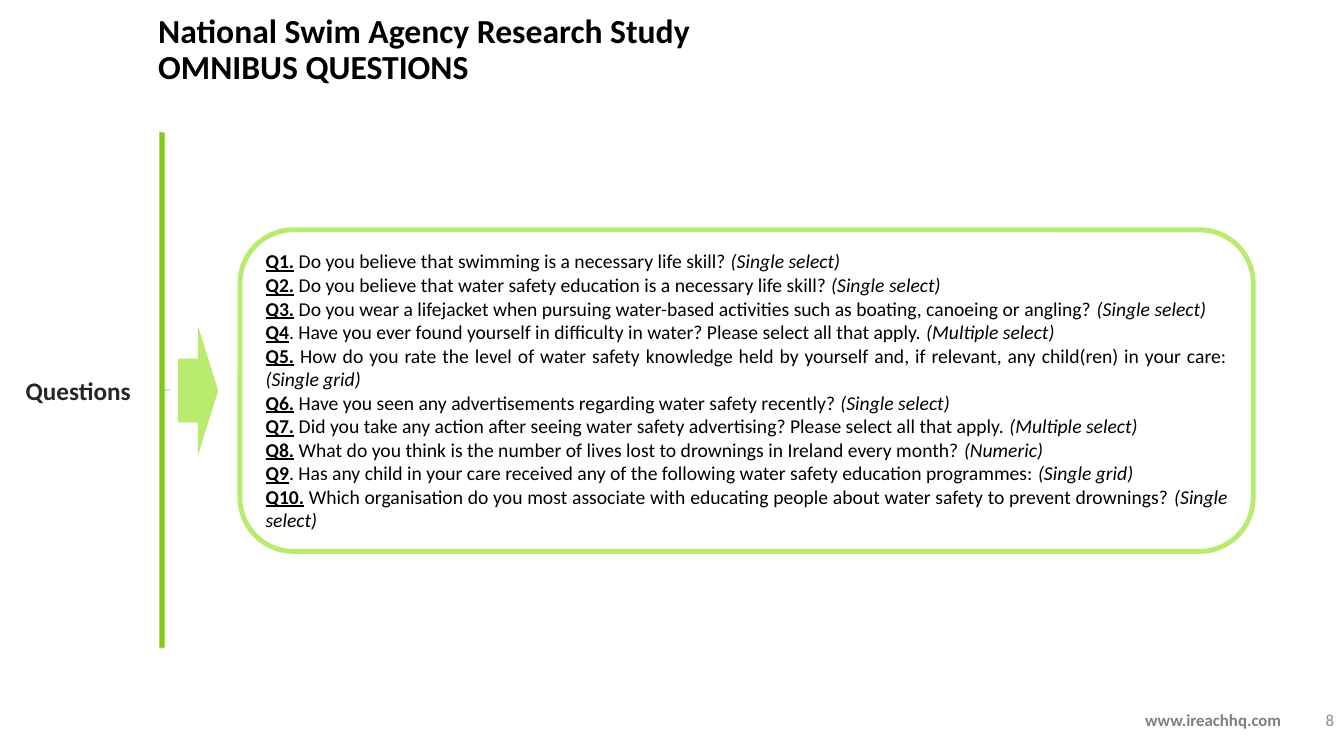
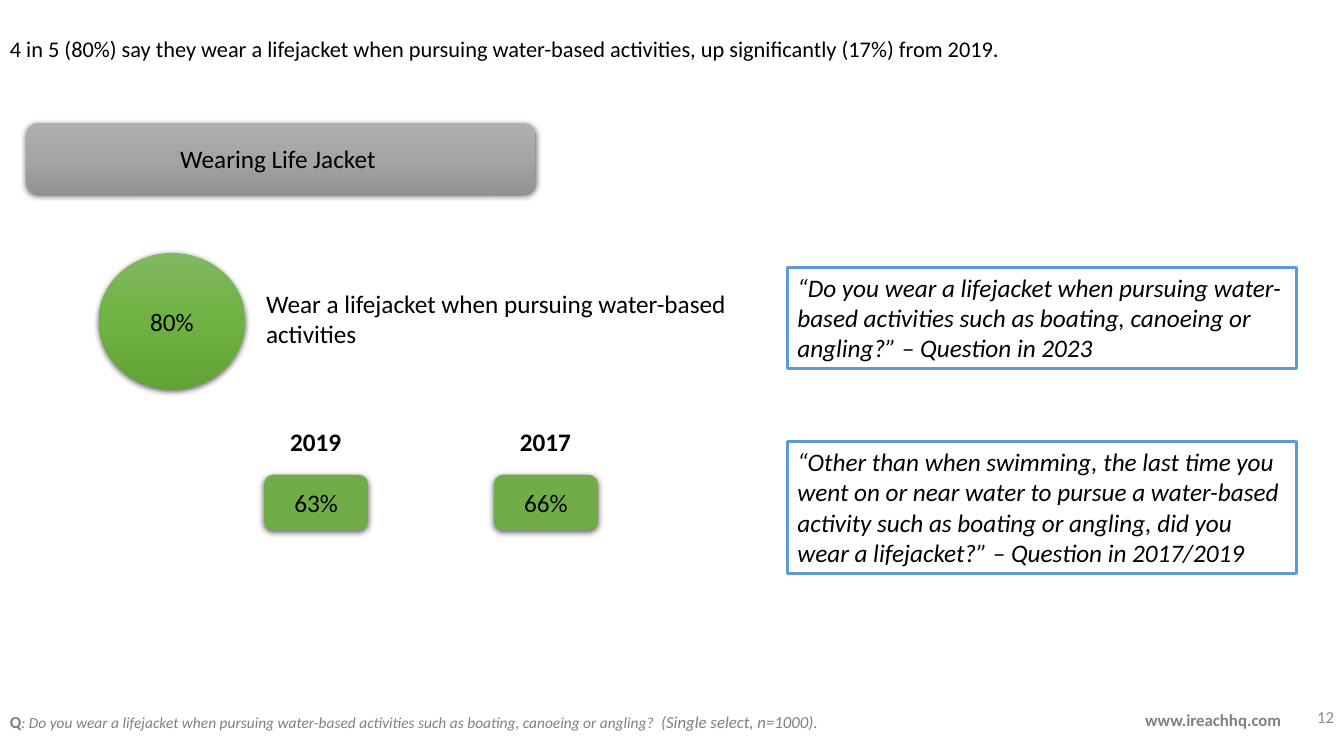
from dataclasses import dataclass
from typing import Optional

from pptx import Presentation
from pptx.dml.color import RGBColor
from pptx.enum.shapes import MSO_SHAPE
from pptx.enum.text import MSO_ANCHOR, PP_ALIGN
from pptx.oxml import parse_xml
from pptx.oxml.ns import nsdecls
from pptx.util import Inches, Pt

LEFT, CENTER, RIGHT, JUSTIFY = PP_ALIGN.LEFT, PP_ALIGN.CENTER, PP_ALIGN.RIGHT, PP_ALIGN.JUSTIFY
TOP, MIDDLE = MSO_ANCHOR.TOP, MSO_ANCHOR.MIDDLE
RECTANGLE, ROUNDED, OVAL = MSO_SHAPE.RECTANGLE, MSO_SHAPE.ROUNDED_RECTANGLE, MSO_SHAPE.OVAL
RIGHT_ARROW, RIGHT_BRACE = MSO_SHAPE.RIGHT_ARROW, MSO_SHAPE.RIGHT_BRACE

FONT = "Calibri"
BLACK, CHARCOAL, GREY, PAGE_GREY = "000000", "262626", "7F7F7F", "8C8C8C"
LIME, DARK_LIME, GREEN, BLUE = "B9EC6E", "83C91B", "70AD47", "5B9BD5"
GREEN_GRADIENT = ("81B861", "6FB242", "62A336")
GREY_GRADIENT = ("AFAFAF", "A5A5A5", "939393")


@dataclass(frozen=True)
class Box:
    left: float
    top: float
    width: float
    height: float

    def lengths(self):
        return [Inches(value) for value in (self.left, self.top, self.width, self.height)]


@dataclass(frozen=True)
class Span:
    text: str
    size: float = 18
    color: str = BLACK
    bold: bool = False
    italic: bool = False
    underline: bool = False


@dataclass(frozen=True)
class Question:
    label: str
    wording: str
    answer: str


@dataclass(frozen=True)
class YearResult:
    year: str
    share: str


@dataclass(frozen=True)
class Quote:
    text: str
    top: float
    height: float


QUESTIONS = [
    Question("Q1.", " Do you believe that swimming is a necessary life skill? ", "Single select"),
    Question("Q2.", " Do you believe that water safety education is a necessary life skill? ",
             "Single select"),
    Question("Q3.", " Do you wear a lifejacket when pursuing water-based activities such as "
             "boating, canoeing or angling? ", "Single select"),
    Question("Q4", ". Have you ever found yourself in difficulty in water? "
             "Please select all that apply. ", "Multiple select"),
    Question("Q5.", " How do you rate the level of water safety knowledge held by yourself and, "
             "if relevant, any child(ren) in your care: ", "Single grid"),
    Question("Q6.", " Have you seen any advertisements regarding water safety recently? ",
             "Single select"),
    Question("Q7.", " Did you take any action after seeing water safety advertising? "
             "Please select all that apply. ", "Multiple select"),
    Question("Q8.", " What do you think is the number of lives lost to drownings in Ireland "
             "every month? ", "Numeric"),
    Question("Q9", ". Has any child in your care received any of the following water safety "
             "education programmes: ", "Single grid"),
    Question("Q10.", " Which organisation do you most associate with educating people about "
             "water safety to prevent drownings? ", "Single select"),
]

RESULTS = [YearResult("2019", "63%"), YearResult("2017", "66%")]

QUOTES = [
    Quote("“Do you wear a lifejacket when pursuing water-based activities such as boating, "
          "canoeing or angling?” – Question in 2023", 2.65, 1.01),
    Quote("“Other than when swimming, the last time you went on or near water to pursue a "
          "water-based activity such as boating or angling, did you wear a lifejacket?” "
          "– Question in 2017/2019", 4.38, 1.31),
]


def rgb(color: str) -> RGBColor:
    return RGBColor.from_string(color)


def write(shape, lines: list[list[Span]], align=LEFT, anchor=TOP,
          spacing: float = 1.0, wrap: bool = True) -> None:
    frame = shape.text_frame
    frame.word_wrap = wrap
    frame.vertical_anchor = anchor
    for index, spans in enumerate(lines):
        paragraph = frame.add_paragraph() if index else frame.paragraphs[0]
        paragraph.alignment = align
        paragraph.line_spacing = spacing
        for span in spans:
            run = paragraph.add_run()
            run.text = span.text
            font = run.font
            font.name = FONT
            font.size = Pt(span.size)
            font.color.rgb = rgb(span.color)
            font.bold, font.italic, font.underline = span.bold, span.italic, span.underline


def add_text(slide, box: Box, lines: list[list[Span]], align=LEFT, anchor=TOP,
             spacing: float = 1.0, wrap: bool = True) -> None:
    write(slide.shapes.add_textbox(*box.lengths()), lines, align, anchor, spacing, wrap)


def add_panel(slide, kind, box: Box, fill: Optional[str] = None,
              line: Optional[str] = None, line_width: float = 0.5):
    shape = slide.shapes.add_shape(kind, *box.lengths())
    shape.shadow.inherit = False
    if fill:
        shape.fill.solid()
        shape.fill.fore_color.rgb = rgb(fill)
    else:
        shape.fill.background()
    if line:
        shape.line.color.rgb = rgb(line)
        shape.line.width = Pt(line_width)
    else:
        shape.line.fill.background()
    return shape


def set_gradient(shape, colors: tuple[str, str, str]) -> None:
    stops = "".join(
        f'<a:gs pos="{index * 50000}"><a:srgbClr val="{color}"/></a:gs>'
        for index, color in enumerate(colors))
    gradient = parse_xml(
        f'<a:gradFill {nsdecls("a")} rotWithShape="1"><a:gsLst>{stops}</a:gsLst>'
        '<a:lin ang="5400000" scaled="0"/></a:gradFill>')
    properties = shape.element.spPr
    properties.replace(properties.find("{*}noFill"), gradient)


def add_badge(slide, kind, box: Box, text: str, fill: Optional[str] = None,
              gradient: Optional[tuple[str, str, str]] = None) -> None:
    shape = add_panel(slide, kind, box, fill)
    if gradient:
        set_gradient(shape, gradient)
    shape.element.spPr.find("{*}effectLst").append(parse_xml(
        f'<a:outerShdw {nsdecls("a")} blurRad="57150" dist="19050" dir="5400000" '
        'algn="ctr" rotWithShape="0"><a:srgbClr val="000000"><a:alpha val="63000"/>'
        '</a:srgbClr></a:outerShdw>'))
    write(shape, [[Span(text)]], CENTER, MIDDLE)


def add_base_slide(presentation, number: str, number_top: float):
    slide = presentation.slides.add_slide(presentation.slide_layouts[6])
    add_text(slide, Box(11.26, 6.96, 1.87, 0.38),
             [[Span("www.ireachhq.com", 12, GREY, bold=True)]], anchor=MIDDLE, spacing=0.9)
    add_text(slide, Box(10.33, number_top, 3, 0.4),
             [[Span(number, 12, PAGE_GREY)]], RIGHT, MIDDLE)
    return slide


def build_questions(presentation) -> None:
    slide = add_base_slide(presentation, "8", 6.94)
    titles = ["National Swim Agency Research Study", "OMNIBUS QUESTIONS"]
    add_text(slide, Box(1.47, 0.09, 10.11, 0.83),
             [[Span(title, 24, bold=True)] for title in titles], anchor=MIDDLE, spacing=0.9)
    panel = add_panel(slide, ROUNDED, Box(2.38, 2.28, 10.05, 3.19), line=LIME, line_width=3.5)
    write(panel, [[Span(question.label, 14, bold=True, underline=True),
                   Span(question.wording, 14),
                   Span(f"({question.answer})", 14, italic=True)]
                  for question in QUESTIONS], JUSTIFY, MIDDLE)
    add_panel(slide, RIGHT_ARROW, Box(1.77, 3.25, 0.39, 1.25), LIME, LIME)
    add_panel(slide, RIGHT_BRACE, Box(1.58, 1.31, 0.11, 5.12), DARK_LIME, LIME)
    add_text(slide, Box(0.15, 3.67, 1.25, 0.4),
             [[Span("Questions", 18, CHARCOAL, bold=True)]], CENTER, wrap=False)


def build_life_jacket(presentation) -> None:
    slide = add_base_slide(presentation, "12", 6.91)
    add_text(slide, Box(0, 0.3, 10.84, 0.37),
             [[Span("4 in 5 (80%) say they wear a lifejacket when pursuing water-based "
                    "activities, up significantly (17%) from 2019.", 16)]])
    add_text(slide, Box(0, 6.93, 11.26, 0.4), [[
        Span("Q", 12, GREY, bold=True),
        Span(": Do you wear a lifejacket when pursuing water-based activities such as boating, "
             "canoeing or angling?", 11, "808080", italic=True),
        Span(" ", 18, bold=True, italic=True),
        Span("(Single select, n=1000).", 12, GREY, italic=True)]])
    add_badge(slide, ROUNDED, Box(0.26, 1.22, 5.05, 0.7), "Wearing Life Jacket ",
              gradient=GREY_GRADIENT)
    add_badge(slide, OVAL, Box(0.98, 2.51, 1.45, 1.35), "80%", gradient=GREEN_GRADIENT)
    add_text(slide, Box(2.54, 2.81, 5.05, 0.71),
             [[Span("Wear a lifejacket when pursuing water-based activities")]])
    for index, result in enumerate(RESULTS):
        offset = 2.28 * index
        add_text(slide, Box(2.57 + offset, 4.18, 1.12, 0.4),
                 [[Span(result.year, bold=True)]], CENTER)
        add_badge(slide, ROUNDED, Box(2.62 + offset, 4.71, 1.03, 0.55), result.share, GREEN)
    for quote in QUOTES:
        panel = add_panel(slide, RECTANGLE, Box(7.81, quote.top, 5.05, quote.height),
                          line=BLUE, line_width=2.25)
        write(panel, [[Span(quote.text, italic=True)]])


def main() -> None:
    presentation = Presentation()
    presentation.slide_width = Inches(13.33)
    presentation.slide_height = Inches(7.5)
    build_questions(presentation)
    build_life_jacket(presentation)
    presentation.save("out.pptx")


if __name__ == "__main__":
    main()
